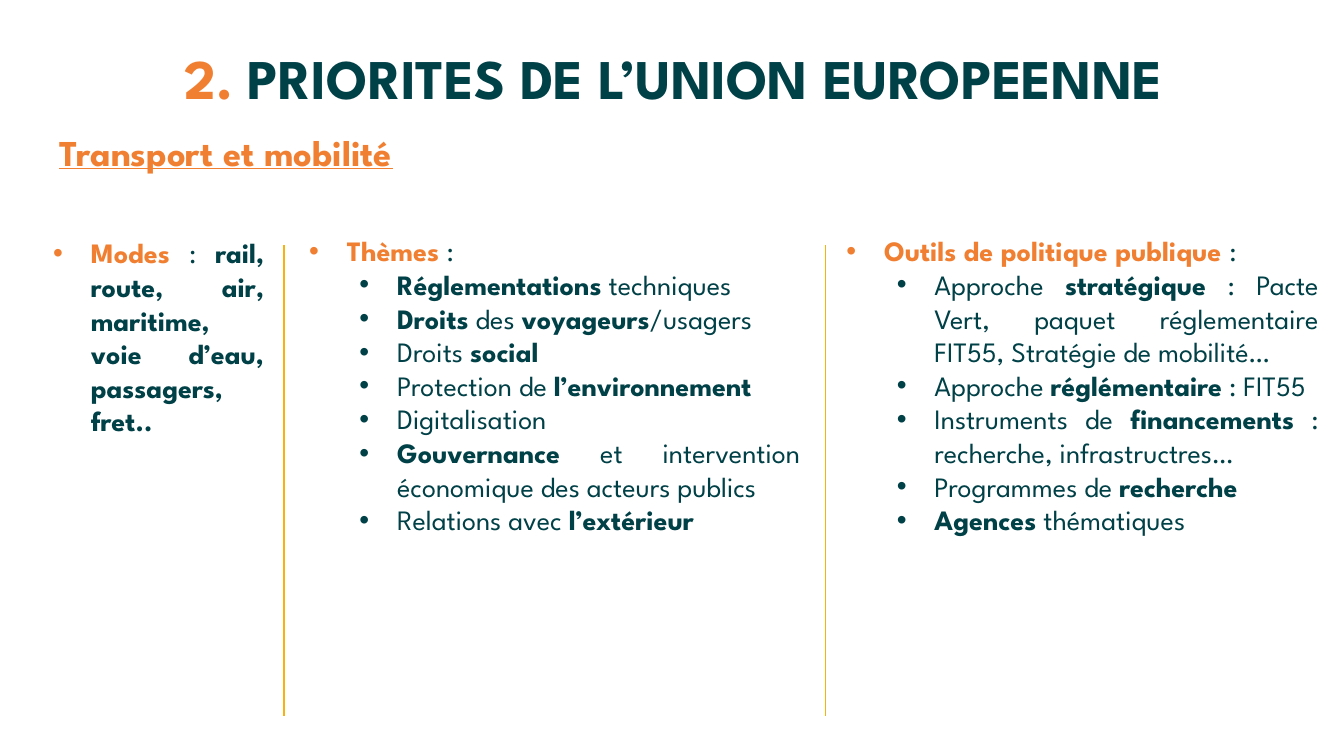
from lxml.etree import SubElement
from pptx import Presentation
from pptx.dml.color import RGBColor as RGB
from pptx.enum.shapes import MSO_CONNECTOR as LINK
from pptx.enum.text import MSO_ANCHOR as ANCHOR, MSO_AUTO_SIZE as AUTO, PP_ALIGN as ALIGN
from pptx.oxml.ns import qn
from pptx.util import Cm, Pt

FONT = "League Spartan"
COLORS = {"orange": "F07F31", "teal": "004047", "yellow": "F9B20D"}


def add_run(para, text, size, color, bold=True):
    run = para.add_run()
    run.text = text
    font = run.font
    font.name, font.size, font.bold = FONT, Pt(size), bold
    font.color.rgb = RGB.from_string(COLORS[color])
    return run


def add_box(left, top, width, height):
    box = slide.shapes.add_textbox(Cm(left), Cm(top), Cm(width), Cm(height))
    frame = box.text_frame
    frame.word_wrap = True
    frame.auto_size = AUTO.SHAPE_TO_FIT_TEXT
    return frame


deck = Presentation()
deck.slide_width, deck.slide_height = Cm(33.87), Cm(19.05)
slide = deck.slides.add_slide(deck.slide_layouts[5])

# Title
title = slide.shapes.title
title.left, title.top, title.width, title.height = Cm(4.39), Cm(0.97), Cm(29.08), Cm(1.75)
frame = title.text_frame
frame.auto_size = AUTO.NONE
frame.vertical_anchor = ANCHOR.TOP
para = frame.paragraphs[0]
para.alignment = ALIGN.LEFT
add_run(para, "2. ", 40, "orange")
add_run(para, "PRIORITES DE L’UNION EUROPEENNE", 40, "teal")

# Subtitle
para = add_box(1.24, 3.15, 31.75, 2.24).paragraphs[0]
para.alignment = ALIGN.JUSTIFY
add_run(para, "Transport et mobilité", 26, "orange").font.underline = True

# Columns: place, heading, rest of the heading line, items; *bold* parts
columns = [
    ((1.09, 5.82, 5.82, 5.38), "Modes ",
     ": *rail, route, air, maritime, voie d’eau, passagers, fret..*", []),
    ((7.54, 5.77, 12.88, 9.65), "Thèmes ", ":", [
        "*Réglementations* techniques",
        "*Droits* des *voyageurs*/usagers",
        "Droits *social*",
        "Protection de *l’environnement*",
        "Digitalisation",
        "*Gouvernance* et intervention économique des acteurs publics",
        "Relations avec *l’extérieur*",
    ]),
    ((21.08, 5.77, 12.4, 10.52), "Outils de politique publique ", ":", [
        "Approche *stratégique* : Pacte Vert, paquet réglementaire FIT55, Stratégie de mobilité…",
        "Approche *réglémentaire* : FIT55",
        "Instruments de *financements* : recherche, infrastructres…",
        "Programmes de *recherche*",
        "*Agences* thématiques",
    ]),
]
for place, head, rest, items in columns:
    frame = add_box(*place)
    for row, text in enumerate([rest] + items):
        para = frame.add_paragraph() if row else frame.paragraphs[0]
        para.alignment = ALIGN.JUSTIFY
        para.level = 1 if row else 0

        # Bullet
        props = para._p.get_or_add_pPr()
        props.set("marL", str(Cm(2.22 if row else 0.95)))
        props.set("indent", str(-Cm(0.95)))
        tint = SubElement(props, qn("a:buClr"))
        SubElement(tint, qn("a:srgbClr"), val=COLORS["teal" if row else "orange"])
        SubElement(props, qn("a:buFont"), typeface="Arial")
        SubElement(props, qn("a:buChar"), char="•")

        # Runs
        if not row:
            add_run(para, head, 20, "orange")
        for part, piece in enumerate(text.split("*")):
            if piece:
                add_run(para, piece, 20, "teal", part % 2 == 1)

# Dividers
for x in (7.16, 20.8):
    line = slide.shapes.add_connector(LINK.STRAIGHT, Cm(x), Cm(6.17), Cm(x), Cm(18.03))
    line.line.color.rgb = RGB.from_string(COLORS["yellow"])
    line.line.width = Pt(1)
    SubElement(line._element.spPr, qn("a:effectLst"))

deck.save("out.pptx")
